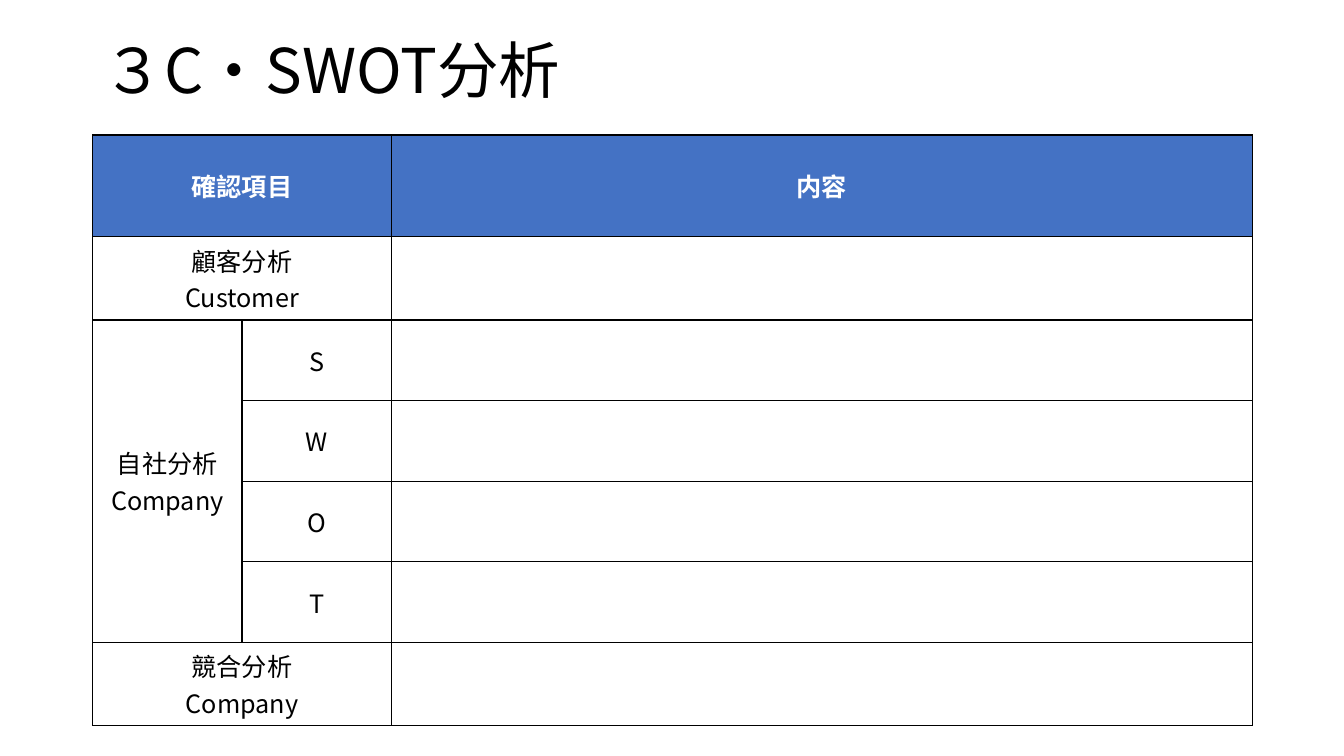
from lxml import etree
from pptx import Presentation
from pptx import util as u
from pptx.dml.color import RGBColor
from pptx.enum import text
from pptx.oxml.ns import qn

FONT = "Noto Sans CJK JP"
BLACK = RGBColor(0x00, 0x00, 0x00)
WHITE = RGBColor(0xFF, 0xFF, 0xFF)
BLUE = RGBColor(0x44, 0x72, 0xC4)

COLUMN_WIDTHS = (1.48, 1.48, 8.54)
ROW_HEIGHTS = (1.01,) + (0.8,) * 6
MERGES = (((0, 0), (0, 1)), ((1, 0), (1, 1)), ((2, 0), (5, 0)), ((6, 0), (6, 1)))
ROWS = (
    ("確認項目", "", "内容"),
    ("顧客分析\nCustomer", "", ""),
    ("自社分析\nCompany", "S", ""),
    ("", "W", ""),
    ("", "O", ""),
    ("", "T", ""),
    ("競合分析\nCompany", "", ""),
)


def format_text(frame, size, color, bold, align, spacing=1.0):
    """Apply one font and paragraph format to a whole text frame."""
    frame.vertical_anchor = text.MSO_ANCHOR.MIDDLE
    font_format = {"name": FONT, "size": u.Pt(size), "bold": bold}
    for para in frame.paragraphs:
        para.alignment = align
        para.line_spacing = spacing
        for span in para.runs:
            for name, value in font_format.items():
                setattr(span.font, name, value)
            span.font.color.rgb = color
            east_asian = etree.Element(qn("a:ea"), typeface=FONT)
            span.font._element.find(qn("a:latin")).addnext(east_asian)


def add_title(page, wording):
    """Place and format the title placeholder."""
    title = page.shapes.title
    place = {"left": 0.92, "top": 0, "width": 11.5, "height": 1.45}
    for name, value in place.items():
        setattr(title, name, u.Inches(value))
    title.text_frame.text = wording
    format_text(title.text_frame, 44, BLACK, False, text.PP_ALIGN.LEFT, 0.9)


def add_borders(cell):
    """Draw a thin black line on every side of a cell."""
    properties = cell._tc.get_or_add_tcPr()
    for position, side in enumerate(("a:lnL", "a:lnR", "a:lnT", "a:lnB")):
        line = etree.Element(qn(side), w=str(u.Pt(1)))
        fill = etree.SubElement(line, qn("a:solidFill"))
        etree.SubElement(fill, qn("a:srgbClr"), val=str(BLACK))
        properties.insert(position, line)


def format_cell(cell, wording, is_header):
    """Fill in and format one table cell."""
    cell.fill.solid()
    cell.fill.fore_color.rgb = BLUE if is_header else WHITE
    add_borders(cell)
    cell.vertical_anchor = text.MSO_ANCHOR.MIDDLE
    cell.text_frame.text = wording
    color = WHITE if is_header else BLACK
    format_text(cell.text_frame, 18, color, is_header, text.PP_ALIGN.CENTER)


def add_analysis_table(page):
    """Add the table of items to check and their contents."""
    frame = page.shapes.add_table(
        len(ROWS), len(COLUMN_WIDTHS), u.Inches(0.92), u.Inches(1.34),
        u.Inches(sum(COLUMN_WIDTHS)), u.Inches(sum(ROW_HEIGHTS)))
    table = frame.table
    for column, width in zip(table.columns, COLUMN_WIDTHS):
        column.width = u.Inches(width)
    for row, height in zip(table.rows, ROW_HEIGHTS):
        row.height = u.Inches(height)
    for row_index, wordings in enumerate(ROWS):
        for column_index, wording in enumerate(wordings):
            format_cell(table.cell(row_index, column_index), wording, row_index == 0)
    for first, last in MERGES:
        table.cell(*first).merge(table.cell(*last))


def main():
    """Build and save the analysis slide."""
    deck = Presentation()
    deck.slide_width, deck.slide_height = u.Inches(13.33), u.Inches(7.5)
    page = deck.slides.add_slide(deck.slide_layouts[5])
    add_title(page, "３C・SWOT分析")
    add_analysis_table(page)
    deck.save("out.pptx")


if __name__ == "__main__":
    main()
